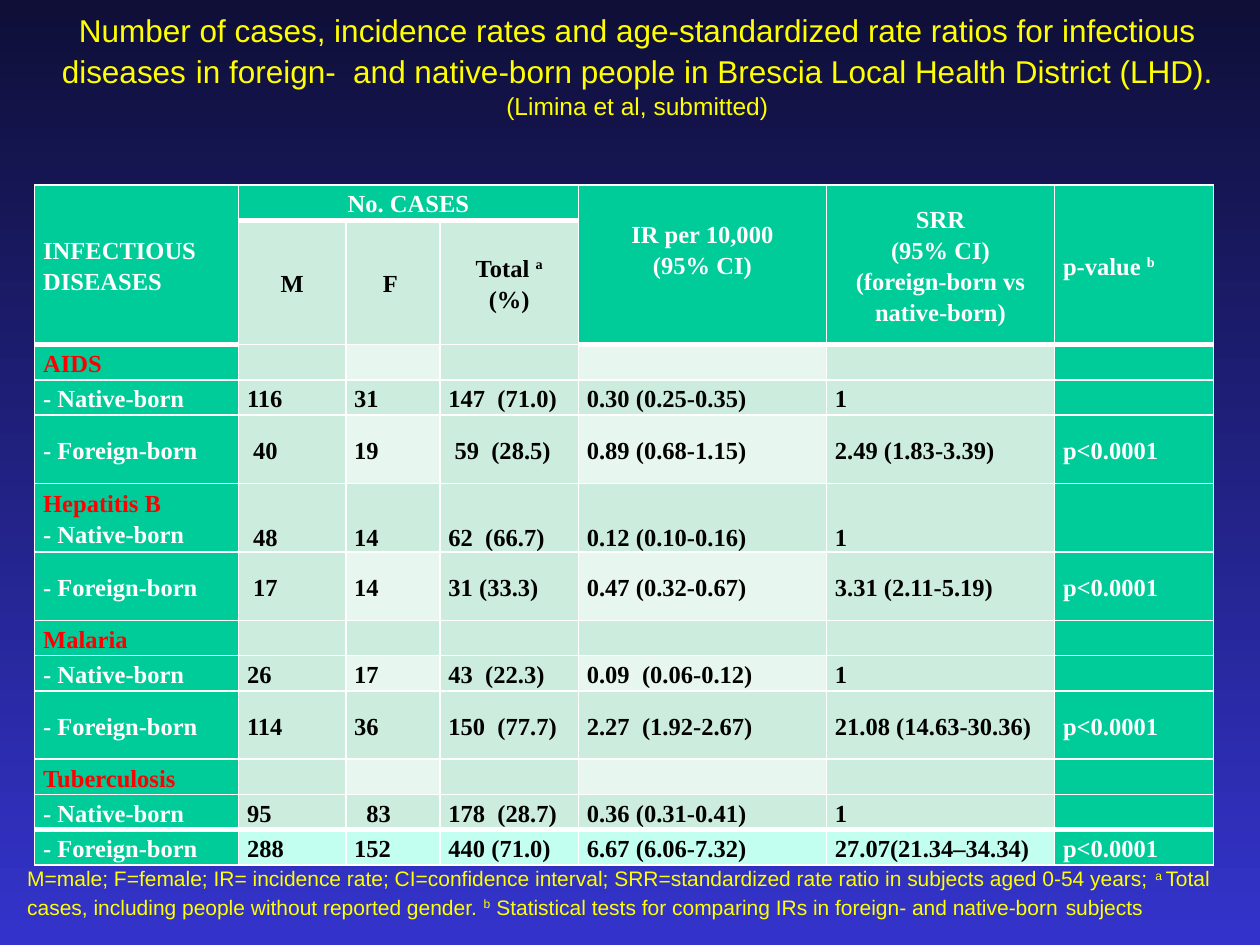
"""Build the slide on infectious diseases in foreign- and native-born people."""
from dataclasses import dataclass

from lxml.etree import SubElement
from pptx import Presentation
from pptx.dml.color import RGBColor
from pptx.enum.text import MSO_ANCHOR, PP_ALIGN
from pptx.oxml.ns import qn
from pptx.util import Cm, Pt

WHITE, BLACK, RED, YELLOW = "FFFFFF", "000000", "FF0000", "FFFF00"
GREEN, MINT, PALE, AQUA = "00CC99", "CCECDE", "E7F6EF", "C2FFF0"
COLUMN_WIDTHS = (4.11, 2.16, 1.9, 2.79, 5.0, 4.6, 3.2)
HEADER_HEIGHTS = (0.71, 2.11)
SINGLE, DOUBLE = 0.71, 1.38
LAST_COLUMN = len(COLUMN_WIDTHS) - 1


@dataclass(frozen=True)
class Run:
    text: str
    size: int
    superscript: bool = False


@dataclass(frozen=True)
class TextBox:
    left: float
    top: float
    width: float
    height: float
    alignment: PP_ALIGN
    anchor: MSO_ANCHOR
    runs: tuple[Run, ...]


@dataclass(frozen=True)
class Header:
    row: int
    column: int
    last_row: int
    last_column: int
    text: str
    centred: bool = True
    bottom_margin: float = 0


@dataclass(frozen=True)
class BodyRow:
    height: float
    label: str
    values: tuple[str, ...] = ("",) * LAST_COLUMN


HEADERS = (
    Header(0, 0, 1, 0, "INFECTIOUS\nDISEASES", centred=False),
    Header(0, 1, 0, 3, "No. CASES"),
    Header(0, 4, 1, 4, "IR per 10,000\n(95% CI)", bottom_margin=0.65),
    Header(0, 5, 1, 5, "SRR\n(95% CI)\n(foreign-born vs native-born)"),
    Header(0, 6, 1, 6, "p-value ^b", centred=False),
    Header(1, 1, 1, 1, "M"),
    Header(1, 2, 1, 2, "F "),
    Header(1, 3, 1, 3, "Total ^a\n(%)"),
)
NATIVE, FOREIGN = "- Native-born", "- Foreign-born"
BODY = (
    BodyRow(SINGLE, "AIDS"),
    BodyRow(SINGLE, NATIVE, ("116", "31", "147  (71.0)", "0.30 (0.25-0.35)", "1", "")),
    BodyRow(DOUBLE, FOREIGN, (" 40", "19", " 59  (28.5)", "0.89 (0.68-1.15)", "2.49 (1.83-3.39)", "p<0.0001")),
    BodyRow(DOUBLE, "Hepatitis B\n" + NATIVE, (" 48", "14", "62  (66.7)", "0.12 (0.10-0.16)", "1", "")),
    BodyRow(DOUBLE, FOREIGN, (" 17", "14", "31 (33.3)", "0.47 (0.32-0.67)", "3.31 (2.11-5.19)", "p<0.0001")),
    BodyRow(SINGLE, "Malaria"),
    BodyRow(SINGLE, NATIVE, ("26", "17", "43  (22.3)", "0.09  (0.06-0.12)", "1", "")),
    BodyRow(DOUBLE, FOREIGN, ("114", "36", "150  (77.7)", "2.27  (1.92-2.67)", "21.08 (14.63-30.36)", "p<0.0001")),
    BodyRow(SINGLE, "Tuberculosis"),
    BodyRow(SINGLE, NATIVE, ("95", "  83", "178  (28.7)", "0.36 (0.31-0.41)", "1", "")),
    BodyRow(SINGLE, FOREIGN, ("288", "152", "440 (71.0)", "6.67 (6.06-7.32)", "27.07(21.34–34.34)", "p<0.0001")),
)
LAST_ROW = len(HEADER_HEIGHTS) + len(BODY) - 1
TITLE = TextBox(0.3, 0.08, 25.1, 2.49, PP_ALIGN.CENTER, MSO_ANCHOR.MIDDLE, (
    Run("Number of cases, incidence rates and age-standardized rate ratios for infectious diseases", 18),
    Run(" ", 20),
    Run("in foreign-  and native-born people in Brescia Local Health District (LHD). ", 18),
    Run("(Limina et al, submitted)", 14),
))
FOOTNOTE = TextBox(0.3, 17.32, 25.1, 1.37, PP_ALIGN.LEFT, MSO_ANCHOR.TOP, (
    Run("M=male; F=female; IR= incidence rate; CI=confidence interval; "
        "SRR=standardized rate ratio in subjects aged 0-54 years; ", 12),
    Run("a ", 12, True),
    Run("Total cases, including people without reported gender. ", 12),
    Run("b", 12, True),
    Run(" Statistical tests for comparing IRs in foreign- and native-born", 12),
    Run(" ", 14),
    Run("subjects", 12),
))


def rgb(value: str) -> RGBColor:
    """Turn a hex string into a colour."""
    return RGBColor.from_string(value)


def add_run(paragraph, run: Run, font_name: str, color: str, bold: bool = False) -> None:
    """Append one formatted run to a paragraph."""
    text_run = paragraph.add_run()
    text_run.text = run.text
    font = text_run.font
    font.name, font.size, font.bold = font_name, Pt(run.size), bold
    font.color.rgb = rgb(color)
    if run.superscript:
        text_run._r.get_or_add_rPr().set("baseline", "30000")


def add_text_box(slide, box: TextBox) -> None:
    """Draw a yellow text box."""
    shape = slide.shapes.add_textbox(Cm(box.left), Cm(box.top), Cm(box.width), Cm(box.height))
    frame = shape.text_frame
    frame.word_wrap = True
    frame.vertical_anchor = box.anchor
    paragraph = frame.paragraphs[0]
    paragraph.alignment = box.alignment
    for run in box.runs:
        add_run(paragraph, run, "Arial", YELLOW)


def set_borders(cell, top: int, bottom: int) -> None:
    """Give a cell white borders, with the top and bottom widths in points."""
    properties = cell._tc.get_or_add_tcPr()
    for tag, width in (("a:lnL", 1), ("a:lnR", 1), ("a:lnT", top), ("a:lnB", bottom)):
        line = SubElement(properties, qn(tag), w=str(Pt(width)))
        SubElement(SubElement(line, qn("a:solidFill")), qn("a:srgbClr"), val=WHITE)


def write_cell(cell, text: str, colors: list[str], alignment=PP_ALIGN.LEFT, anchor=MSO_ANCHOR.MIDDLE) -> None:
    """Write lines into a cell, one colour each; a caret starts a superscript."""
    cell.vertical_anchor = anchor
    frame = cell.text_frame
    for index, (line, color) in enumerate(zip(text.split("\n"), colors)):
        paragraph = frame.add_paragraph() if index else frame.paragraphs[0]
        paragraph.alignment = alignment
        paragraph.line_spacing = 1.15
        if not line:
            paragraph._p.get_or_add_endParaRPr().set("sz", "1200")
            continue
        for part, piece in enumerate(line.split("^")):
            add_run(paragraph, Run(piece, 14, part == 1), "Times New Roman", color, True)


def cell_fill(row: int, column: int) -> str:
    """Choose a cell's fill from its place in the table."""
    if row == 0 or column in (0, LAST_COLUMN) or (row == 1 and column > 3):
        return GREEN
    if row == LAST_ROW:
        return AQUA
    light = row % 2 == 0 and column in (2, 4)
    return PALE if light else MINT


def add_case_table(slide) -> None:
    """Draw the table of cases, rates and ratios."""
    heights = HEADER_HEIGHTS + tuple(row.height for row in BODY)
    table = slide.shapes.add_table(len(heights), len(COLUMN_WIDTHS), Cm(0.7), Cm(3.73),
                                   Cm(sum(COLUMN_WIDTHS)), Cm(sum(heights))).table
    table.first_row = table.horz_banding = False
    for column, width in zip(table.columns, COLUMN_WIDTHS):
        column.width = Cm(width)
    for row_index, height in enumerate(heights):
        table.rows[row_index].height = Cm(height)
        for column_index in range(len(COLUMN_WIDTHS)):
            cell = table.cell(row_index, column_index)
            cases = 1 <= column_index <= 3
            thick_top = row_index == LAST_ROW or (row_index == 1 and cases) or (row_index == 2 and not cases)
            thick_bottom = row_index == LAST_ROW - 1 or (row_index == 0 and cases) or (row_index == 1 and not cases)
            set_borders(cell, 3 if thick_top else 1, 3 if thick_bottom else 1)
            cell.fill.solid()
            cell.fill.fore_color.rgb = rgb(cell_fill(row_index, column_index))
            cell.margin_left = cell.margin_right = Cm(0.17)
            cell.margin_top = cell.margin_bottom = Cm(0)
    for header in HEADERS:
        cell = table.cell(header.row, header.column)
        if (header.row, header.column) != (header.last_row, header.last_column):
            cell.merge(table.cell(header.last_row, header.last_column))
        cell.margin_bottom = Cm(header.bottom_margin)
        color = BLACK if header.row else WHITE
        write_cell(cell, header.text, [color] * 3, PP_ALIGN.CENTER if header.centred else PP_ALIGN.LEFT)
    for row_index, row in enumerate(BODY, len(HEADER_HEIGHTS)):
        label_colors = [WHITE if line.startswith("-") else RED for line in row.label.split("\n")]
        write_cell(table.cell(row_index, 0), row.label, label_colors)
        anchor = MSO_ANCHOR.BOTTOM if "\n" in row.label else MSO_ANCHOR.MIDDLE
        for column_index, value in enumerate(row.values, 1):
            color = WHITE if column_index == LAST_COLUMN else BLACK
            write_cell(table.cell(row_index, column_index), value, [color], anchor=anchor)


def main() -> None:
    """Build and save the presentation."""
    presentation = Presentation()
    presentation.slide_width, presentation.slide_height = Cm(25.4), Cm(19.05)
    slide = presentation.slides.add_slide(presentation.slide_layouts[6])
    fill = slide.background.fill
    fill.gradient()
    fill.gradient_angle = 270
    for stop, color in zip(fill.gradient_stops, ("0F0F38", "3333CC")):
        stop.color.rgb = rgb(color)
    add_case_table(slide)
    add_text_box(slide, TITLE)
    add_text_box(slide, FOOTNOTE)
    presentation.save("out.pptx")


if __name__ == "__main__":
    main()
